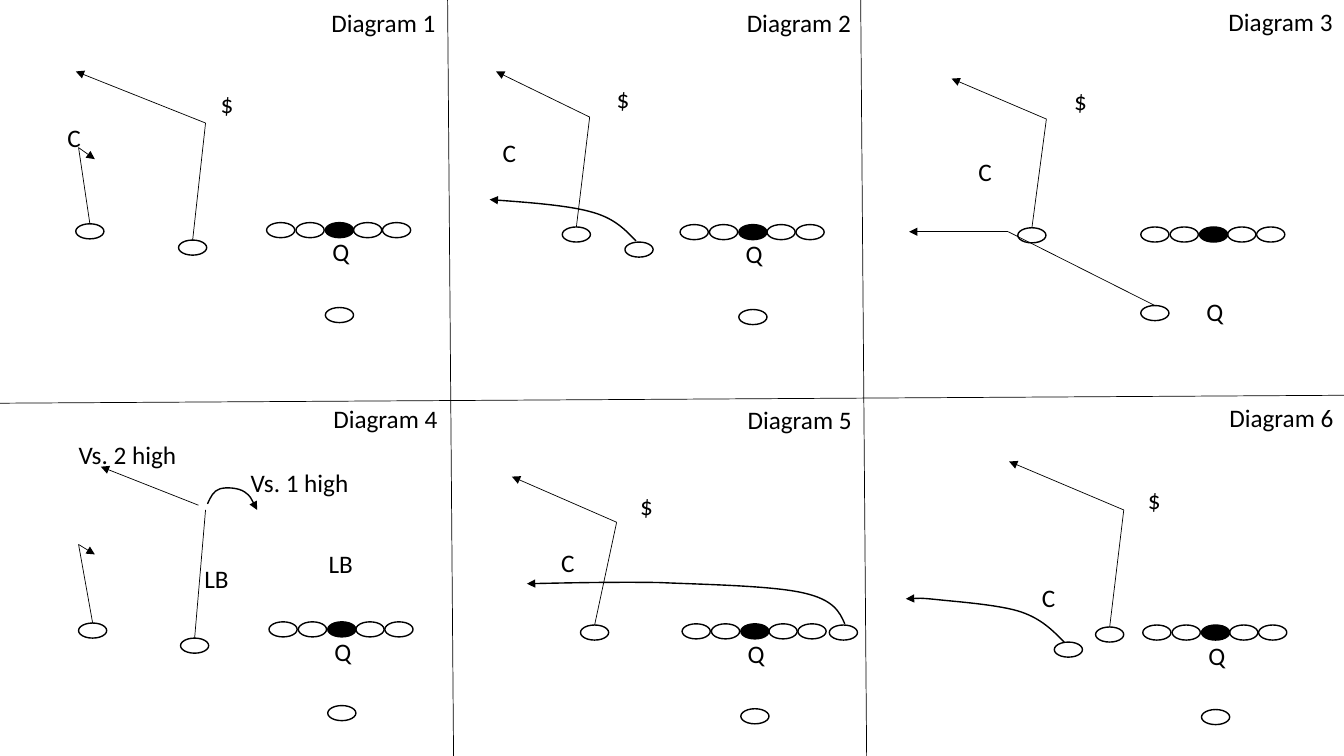
from dataclasses import dataclass

from lxml.etree import SubElement
from pptx import Presentation
from pptx.dml.color import RGBColor
from pptx.enum.shapes import MSO_CONNECTOR, MSO_SHAPE
from pptx.enum.text import MSO_AUTO_SIZE
from pptx.oxml.ns import qn
from pptx.util import Cm, Pt

BLACK = RGBColor(0, 0, 0)
SLIDE_WIDTH, SLIDE_HEIGHT = 33.87, 19.05
OVAL_WIDTH, OVAL_HEIGHT = 0.71, 0.38
LINEMAN_OFFSETS = (-1.48, -0.74, 0, 0.71, 1.44)
LABEL_HEIGHT = 1.02
LABEL_WIDTHS = {"Q": 0.94, "C": 0.86, "$": 0.84, "LB": 1.14,
                "Vs. 1 high": 3, "Vs. 2 high": 3}
TITLE_WIDTH = 3.18
COLUMN_LEFTS = (0, 11.4, 21.8)
ROW_TOPS = (0, 10)


@dataclass
class Player:
    left: float
    top: float
    route: tuple = ()
    arrow: bool = True


@dataclass
class Diagram:
    title: tuple
    center: tuple
    players: tuple
    labels: tuple
    branches: tuple = ()
    curve: tuple = ()


DIAGRAMS = (
    Diagram(
        title=(8.1, 0.05), center=(8.2, 5.61),
        players=(Player(4.5, 6.05, ((5.18, 3.1), (1.91, 1.8))),
                 Player(1.91, 5.64, ((1.98, 3.72), (2.39, 4.01))),
                 Player(8.2, 7.75)),
        labels=(("Q", 8.13, 5.84), ("$", 5.31, 2.11), ("C", 1.45, 2.95))),
    Diagram(
        title=(7.17, 0.05), center=(7.22, 5.66),
        players=(Player(4.35, 6.1),
                 Player(2.77, 5.72, ((3.46, 2.95), (1.1, 1.8))),
                 Player(7.22, 7.8)),
        labels=(("Q", 7.14, 5.89), ("C", 1.02, 3.33), ("$", 3.89, 1.98)),
        curve=((4.63, 6.07), (4.35, 5.79), (4.09, 5.49), (3.46, 5.33),
               (2.85, 5.16), (0.94, 5.03), (0.94, 5.03))),
    Diagram(
        title=(8.91, 0.03), center=(8.43, 5.72),
        players=(Player(3.85, 5.74, ((4.57, 3), (2.18, 1.98))),
                 Player(6.95, 7.7, ((3.61, 5.84), (1.11, 5.84)))),
        labels=(("Q", 8.35, 7.34), ("C", 2.61, 3.81), ("$", 5.02, 2.03))),
    Diagram(
        title=(8.15, 0.03), center=(8.26, 5.67),
        players=(Player(4.55, 6.08, ((5.18, 2.85),), arrow=False),
                 Player(1.98, 5.7, ((1.98, 3.72), (2.39, 3.97))),
                 Player(8.26, 7.78)),
        labels=(("Q", 8.18, 5.9), ("Vs. 2 high", 1.73, 0.95),
                ("Vs. 1 high", 6.07, 1.66), ("LB", 8.03, 3.69),
                ("LB", 4.9, 4.07)),
        branches=(((5, 2.73), (2.54, 1.76)),),
        curve=((5.23, 2.7), (5.31, 2.52), (5.38, 2.37), (5.54, 2.32),
               (5.69, 2.27), (6.02, 2.29), (6.17, 2.4),
               (6.32, 2.5), (6.48, 2.85), (6.48, 2.85))),
    Diagram(
        title=(7.19, 0.06), center=(7.27, 5.72),
        players=(Player(9.5, 5.75),
                 Player(3.23, 5.75, ((4.14, 3.16), (1.5, 2.01))),
                 Player(7.27, 7.86)),
        labels=(("Q", 7.19, 5.95), ("C", 2.49, 3.67), ("$", 4.48, 2.22)),
        curve=((9.89, 5.72), (9.76, 5.42), (9.61, 5.11), (8.84, 4.94),
               (8.06, 4.76), (6.38, 4.73), (5.21, 4.68),
               (4.04, 4.66), (1.88, 4.71), (1.88, 4.71))),
    Diagram(
        title=(8.93, 0.01), center=(8.48, 5.75),
        players=(Player(4.77, 6.18),
                 Player(5.81, 5.8, ((6.52, 2.85), (3.63, 1.63))),
                 Player(8.48, 7.88)),
        labels=(("Q", 8.4, 6), ("C", 4.21, 4.55), ("$", 6.88, 2.07)),
        curve=((5.02, 6.18), (4.74, 5.9), (4.46, 5.6), (3.93, 5.42),
               (3.4, 5.24), (2.28, 5.16), (1.82, 5.11),
               (1.34, 5.06), (1.03, 5.09), (1.03, 5.09))),
)


def set_line(item, width, arrow=False):
    item.line.color.rgb = BLACK
    item.line.width = Pt(width)
    if arrow:
        SubElement(item.line._get_or_add_ln(), qn("a:tailEnd"), type="triangle")


def add_segment(slide, start, end, arrow=False):
    segment = slide.shapes.add_connector(
        MSO_CONNECTOR.STRAIGHT, *(Cm(length) for length in (*start, *end)))
    set_line(segment, 0.5, arrow)
    SubElement(segment._element.spPr, qn("a:effectLst"))
    return segment


def add_route(slide, points, arrow=True):
    last = len(points) - 2
    return [add_segment(slide, start, end, arrow and index == last)
            for index, (start, end) in enumerate(zip(points, points[1:]))]


def add_oval(slide, left, top, filled=False):
    oval = slide.shapes.add_shape(
        MSO_SHAPE.OVAL, Cm(left), Cm(top), Cm(OVAL_WIDTH), Cm(OVAL_HEIGHT))
    oval.shadow.inherit = False
    if filled:
        oval.fill.solid()
        oval.fill.fore_color.rgb = BLACK
    else:
        oval.fill.background()
    set_line(oval, 1)
    return oval


def add_curve(slide, points):
    start, *rest = [(Cm(x), Cm(y)) for x, y in points]
    builder = slide.shapes.build_freeform(*start)
    builder.add_line_segments(rest, close=False)
    curve = builder.convert_to_shape()
    curve.shadow.inherit = False
    curve.fill.background()
    set_line(curve, 1, arrow=True)
    steps = list(curve._element.iter(qn("a:lnTo")))
    outline = steps[0].getparent()
    for index in range(0, len(steps), 3):
        bezier = SubElement(outline, qn("a:cubicBezTo"))
        for step in steps[index:index + 3]:
            bezier.append(step[0])
            outline.remove(step)


def add_label(slide, text, left, top, width):
    label = slide.shapes.add_textbox(
        Cm(left), Cm(top), Cm(width), Cm(LABEL_HEIGHT))
    frame = label.text_frame
    frame.word_wrap = False
    frame.auto_size = MSO_AUTO_SIZE.SHAPE_TO_FIT_TEXT
    frame.text = text
    font = frame.paragraphs[0].font
    font.name = "Calibri"
    font.size = Pt(18)
    font.color.rgb = BLACK


def draw_diagram(slide, left, top, number, diagram):
    def place(points):
        return [(left + x, top + y) for x, y in points]

    (center, title) = place((diagram.center, diagram.title))
    for offset in LINEMAN_OFFSETS:
        add_oval(slide, center[0] + offset, center[1], filled=offset == 0)
    for player in diagram.players:
        [(x, y)] = place([(player.left, player.top)])
        oval = add_oval(slide, x, y)
        if player.route:
            points = [(x + OVAL_WIDTH / 2, y), *place(player.route)]
            stem, *_ = add_route(slide, points, player.arrow)
            stem.begin_connect(oval, 0)
    for branch in diagram.branches:
        add_route(slide, place(branch))
    if diagram.curve:
        add_curve(slide, place(diagram.curve))
    add_label(slide, f"Diagram {number}", *title, TITLE_WIDTH)
    for text, x, y in diagram.labels:
        add_label(slide, text, left + x, top + y, LABEL_WIDTHS[text])


def draw_dividers(slide, width, height):
    for x in (11.28, 21.69):
        add_segment(slide, (x, 0), (x + 0.15, height))
    add_segment(slide, (0, 10.16), (width, 9.96))


def main():
    presentation = Presentation()
    presentation.slide_width = Cm(SLIDE_WIDTH)
    presentation.slide_height = Cm(SLIDE_HEIGHT)
    slide = presentation.slides.add_slide(presentation.slide_layouts[6])
    draw_dividers(slide, SLIDE_WIDTH, SLIDE_HEIGHT)
    for index, diagram in enumerate(DIAGRAMS):
        row, column = divmod(index, len(COLUMN_LEFTS))
        draw_diagram(slide, COLUMN_LEFTS[column], ROW_TOPS[row],
                     index + 1, diagram)
    presentation.save("out.pptx")


if __name__ == "__main__":
    main()
